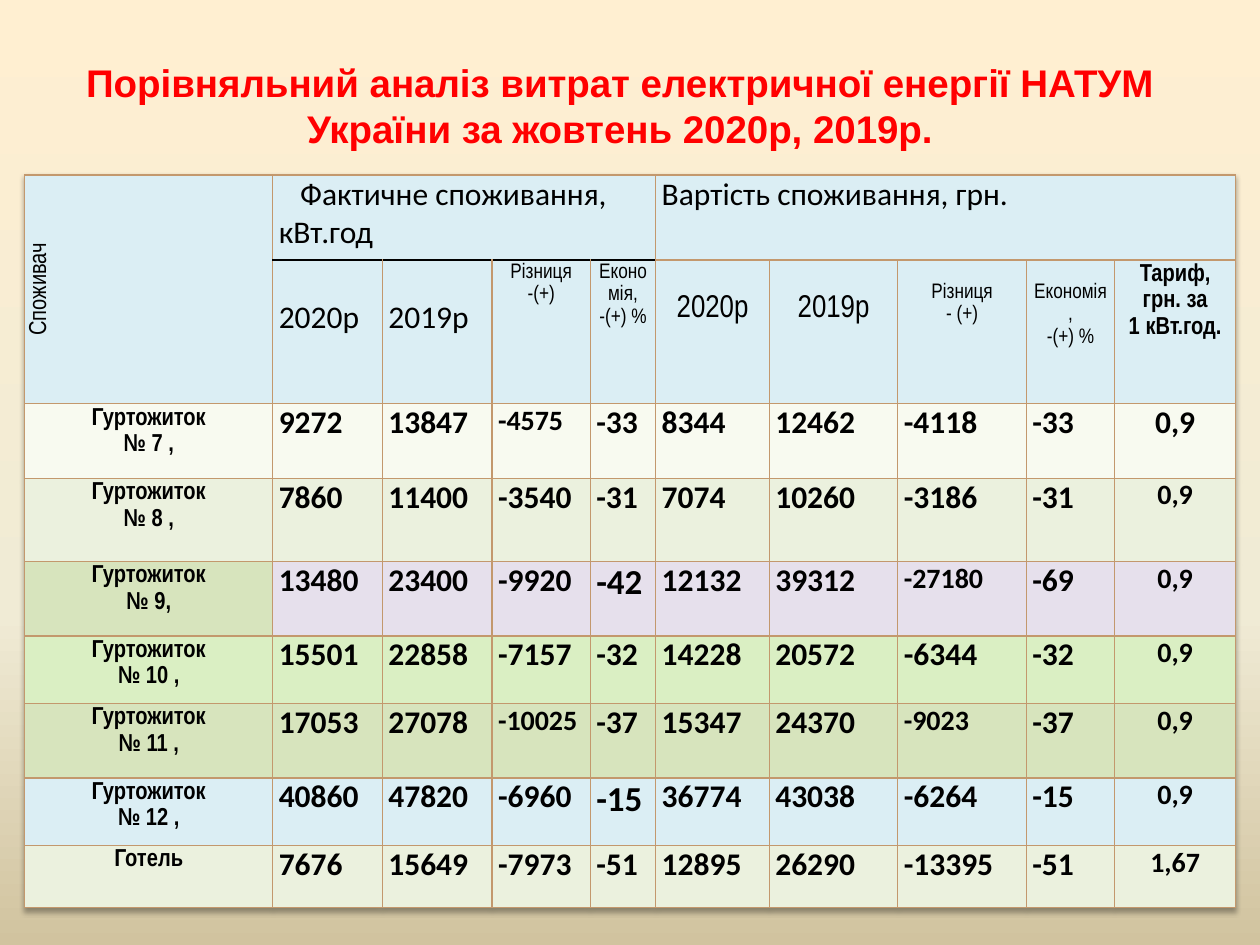
from copy import deepcopy

from lxml.etree import SubElement
from pptx import Presentation
from pptx.dml.color import RGBColor
from pptx.enum.text import MSO_ANCHOR as Anchor, PP_ALIGN as Align
from pptx.oxml import parse_xml
from pptx.oxml.ns import nsdecls, qn
from pptx.util import Cm, Pt

COLORS = {
    "title": "FF0000", "text": "000000", "border": "C3986D",
    "sky": "DBEEF4", "ivory": "F8FAF0", "olive": "EBF1DE",
    "moss": "D7E4BD", "lilac": "E6E0EC", "lime": "DAEFC3",
    "top": "FFEFD1", "middle": "F0EBD5", "bottom": "D1C39F",
}
NARROW, BODY = "Arial Narrow", "Calibri"
CENTER, LEFT = Align.CENTER, Align.LEFT


def add_text(paragraph, text, size, font, bold=False, color="text"):
    for index, part in enumerate(text.split("\n")):
        if index:
            paragraph.add_line_break()
        run = paragraph.add_run()
        run.text = part
        run.font.size, run.font.name, run.font.bold = Pt(size), font, bold
        run.font.color.rgb = RGBColor.from_string(COLORS[color])


def fill_cell(cell, lines, size, font, align=LEFT, bold=False, top=0):
    cell.margin_top = Cm(top)
    for index, line in enumerate(lines):
        frame = cell.text_frame
        paragraph = frame.add_paragraph() if index else frame.paragraphs[0]
        paragraph.alignment = align
        if font == NARROW:
            paragraph.line_spacing = 1.15
        add_text(paragraph, line, size, font, bold)


presentation = Presentation()
presentation.slide_width, presentation.slide_height = Cm(25.4), Cm(19.05)
slide = presentation.slides.add_slide(presentation.slide_layouts[6])

# Background gradient with three stops
fill = slide.background.fill
fill.gradient()
fill.gradient_angle = 270
for stop, name in zip(fill.gradient_stops, ("top", "bottom")):
    stop.color.rgb = RGBColor.from_string(COLORS[name])
stop_list = slide.element.find(".//" + qn("a:gsLst"))
middle = deepcopy(stop_list[0])
middle.set("pos", "65000")
middle.find(qn("a:srgbClr")).set("val", COLORS["middle"])
stop_list.insert(1, middle)

# Title
title = slide.shapes.add_textbox(Cm(0.5), Cm(0.53), Cm(24), Cm(3.18))
title.text_frame.word_wrap = True
title.text_frame.vertical_anchor = Anchor.MIDDLE
paragraph = title.text_frame.paragraphs[0]
paragraph.alignment = CENTER
add_text(paragraph, "Порівняльний аналіз витрат електричної енергії НАТУМ "
         "України за жовтень 2020р, 2019р.", 22, "Arial", True, "title")

# Table grid
widths = [5, 2.21, 2.21, 1.98, 1.32, 2.29, 2.59, 2.59, 1.78, 2.44]
heights = [1.71, 2.9, 1.5, 1.68, 1.5, 1.3, 1.5, 1.25, 1.25]
frame = slide.shapes.add_table(len(heights), len(widths), Cm(0.5), Cm(3.53),
                               Cm(sum(widths)), Cm(sum(heights)))
table = frame.table
table.first_row = table.horz_banding = False
for column, width in zip(table.columns, widths):
    column.width = Cm(width)
for row, height in zip(table.rows, heights):
    row.height = Cm(height)

# Soft shadow under the table
table._tbl.tblPr.insert(0, parse_xml(
    f'<a:effectLst {nsdecls("a")}><a:outerShdw blurRad="40000" dist="23000" '
    'dir="5400000" rotWithShape="0"><a:srgbClr val="000000">'
    '<a:alpha val="35000"/></a:srgbClr></a:outerShdw></a:effectLst>'))

# Row colours, margins and borders
row_fills = ["sky", "sky", "ivory", "olive", "lilac", "lime", "moss", "sky", "olive"]
for r, row_fill in enumerate(row_fills):
    for c in range(len(widths)):
        cell = table.cell(r, c)
        cell.margin_left = cell.margin_right = Cm(0.12)
        cell.margin_top = cell.margin_bottom = 0
        properties = cell._tc.get_or_add_tcPr()
        for side in ("lnL", "lnR", "lnT", "lnB"):
            black = 1 <= c <= 4 and (r, side) in ((0, "lnB"), (1, "lnT"))
            line = SubElement(properties, qn("a:" + side),
                              w=str(Pt(1 if black else 0.79)))
            solid = SubElement(line, qn("a:solidFill"))
            SubElement(solid, qn("a:srgbClr"),
                       val=COLORS["text" if black else "border"])
        name = "moss" if (r, c) == (4, 0) else row_fill
        cell.fill.solid()
        cell.fill.fore_color.rgb = RGBColor.from_string(COLORS[name])

# Merged headings
for first, last in (((0, 0), (1, 0)), ((0, 1), (0, 4)), ((0, 5), (0, 9))):
    table.cell(*first).merge(table.cell(*last))
consumer = table.cell(0, 0)
fill_cell(consumer, ["Споживач"], 14, NARROW, CENTER)
consumer.vertical_anchor = Anchor.MIDDLE
consumer._tc.tcPr.set("vert", "vert270")
usage = table.cell(0, 1)
fill_cell(usage, ["Фактичне споживання, кВт.год"], 18, BODY)
usage.text_frame.paragraphs[0]._p.get_or_add_pPr().set("indent", str(Cm(0.43)))
fill_cell(table.cell(0, 5), ["Вартість споживання, грн."], 18, BODY)

# Column headings: lines, size, font, alignment, bold, top margin in cm
headings = [
    (["2020р"], 18, BODY, LEFT, False, 0.77),
    (["2019р"], 18, BODY, LEFT, False, 0.77),
    (["Різниця", "-(+)"], 12, NARROW, CENTER, False, 0),
    (["Економія,", "-(+) %"], 12, NARROW, CENTER, False, 0),
    (["2020р"], 18, NARROW, CENTER, False, 0.61),
    (["2019р"], 18, NARROW, CENTER, False, 0.61),
    (["Різниця", "- (+)"], 12, NARROW, CENTER, False, 0.4),
    (["Економія,", "-(+) %"], 12, NARROW, CENTER, False, 0.4),
    (["Тариф,", "грн. за", "1 кВт.год."], 14, NARROW, CENTER, True, 0),
]
for c, heading in enumerate(headings, 1):
    fill_cell(table.cell(1, c), *heading)

# Consumption and cost rows
rows = [
    ("Гуртожиток\n№ 7 ,", "9272 13847 -4575 -33 8344 12462 -4118 -33 0,9"),
    ("Гуртожиток\n№ 8 ,", "7860 11400 -3540 -31 7074 10260 -3186 -31 0,9"),
    ("Гуртожиток\n№ 9,", "13480 23400 -9920 -42 12132 39312 -27180 -69 0,9"),
    ("Гуртожиток\n№ 10 ,", "15501 22858 -7157 -32 14228 20572 -6344 -32 0,9"),
    ("Гуртожиток\n№ 11 ,", "17053 27078 -10025 -37 15347 24370 -9023 -37 0,9"),
    ("Гуртожиток\n№ 12 ,", "40860 47820 -6960 -15 36774 43038 -6264 -15 0,9"),
    ("Готель", "7676 15649 -7973 -51 12895 26290 -13395 -51 1,67"),
]
special_sizes = {(2, 3): 16, (2, 9): 18, (4, 4): 20, (4, 7): 16,
                 (6, 3): 16, (6, 7): 16, (7, 4): 20}
for r, (name, values) in enumerate(rows, 2):
    fill_cell(table.cell(r, 0), [name], 14, NARROW, CENTER, True)
    for c, value in enumerate(values.split(), 1):
        tariff = c == 9
        size = special_sizes.get((r, c), 16 if tariff else 18)
        fill_cell(table.cell(r, c), [value], size, BODY,
                  CENTER if tariff else LEFT, True)

presentation.save("out.pptx")
